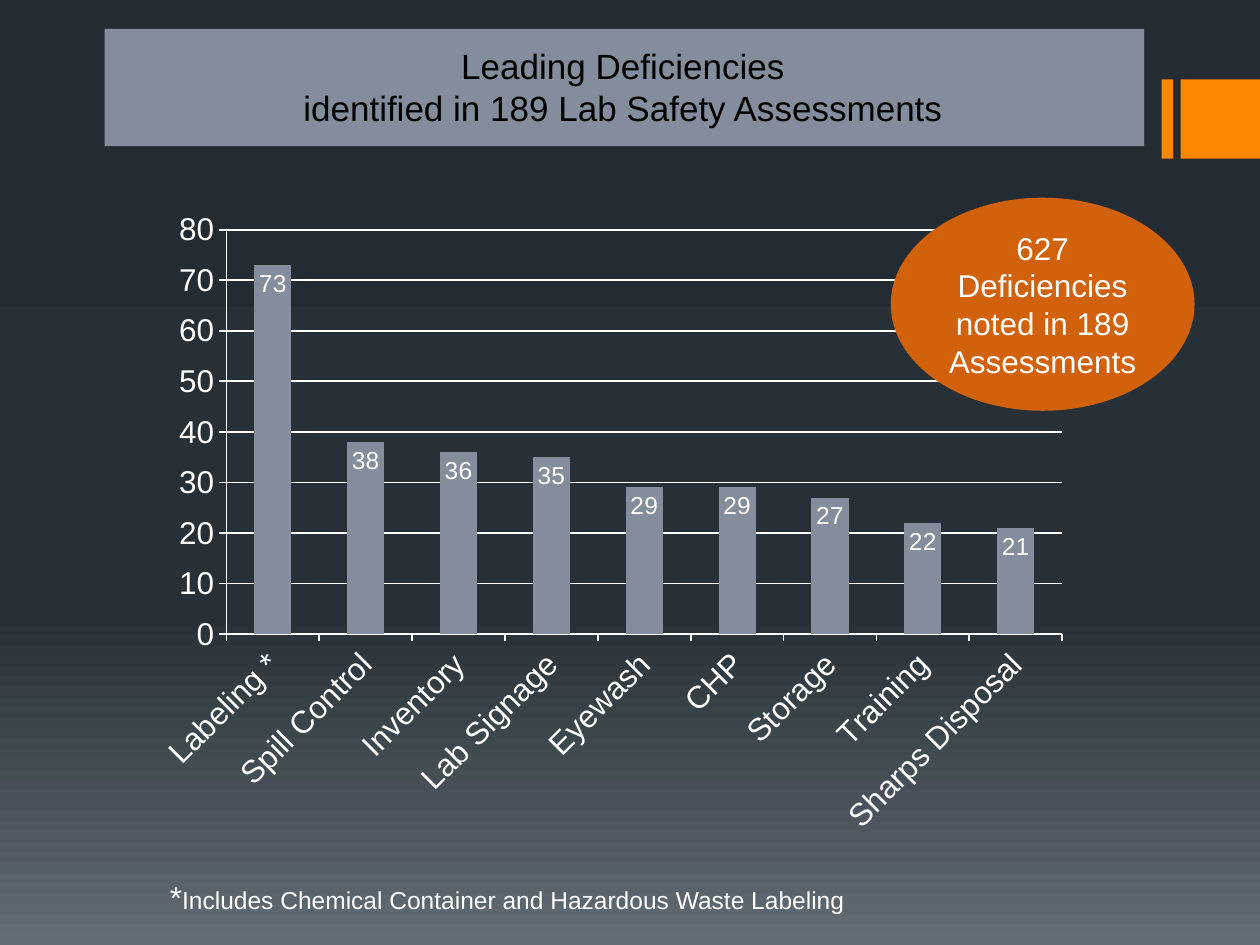
from copy import deepcopy

from pptx import Presentation
from pptx.chart.data import CategoryChartData
from pptx.dml.color import RGBColor
from pptx.enum.chart import XL_CHART_TYPE, XL_LABEL_POSITION, XL_TICK_MARK
from pptx.enum.shapes import MSO_SHAPE
from pptx.enum.text import MSO_ANCHOR, MSO_AUTO_SIZE, PP_ALIGN
from pptx.util import Inches, Pt

FONT = "Arial"
WHITE, BLACK = "FFFFFF", "000000"
SLATE, ORANGE, RUST = "838D9B", "FF8600", "D2610C"
BACKGROUND = [(0, "242C33"), (0.65, "273037"), (1, "636D76")]
BAND = (0.83, 0.23, 8.25, 0.93)
DEFICIENCIES = {
    " Labeling *": 73, "Spill Control": 38, "Inventory": 36,
    "Lab Signage": 35, "Eyewash": 29, "CHP": 29,
    "Storage": 27, "Training": 22, "Sharps Disposal": 21,
}


def color(hex_code):
    return RGBColor.from_string(hex_code)


def inches(at):
    return [Inches(length) for length in at]


def style_font(font, size, hex_code=WHITE):
    font.name = FONT
    font.size = Pt(size)
    font.color.rgb = color(hex_code)


def write(para, text, size, hex_code=WHITE, align=None):
    """Add text to a paragraph, with a line break at each newline."""
    if align is not None:
        para.alignment = align
    for index, line in enumerate(text.split("\n")):
        if index:
            para.add_line_break()
        span = para.add_run()
        span.text = line
        style_font(span.font, size, hex_code)


def paint_background(page):
    fill = page.background.fill
    fill.gradient()
    fill.gradient_angle = 270
    last = fill.gradient_stops[1]._gs
    last.addprevious(deepcopy(last))
    for stop, (position, hex_code) in zip(fill.gradient_stops, BACKGROUND):
        stop.position = position
        stop.color.rgb = color(hex_code)


def add_block(page, at, fill, kind=MSO_SHAPE.RECTANGLE, line=None):
    block = page.shapes.add_shape(kind, *inches(at))
    block.shadow.inherit = False
    block.fill.solid()
    block.fill.fore_color.rgb = color(fill)
    if line:
        block.line.color.rgb = color(line)
        block.line.width = Pt(1.5)
    else:
        block.line.fill.background()
    return block


def place_title(page, band):
    title = page.shapes.title
    band.element.addnext(title.element)
    title.left, title.top, title.width, title.height = inches((0.49, 0.23, 9, 1.1))
    frame = title.text_frame
    frame.word_wrap = True
    frame.auto_size = MSO_AUTO_SIZE.NONE
    frame.vertical_anchor = MSO_ANCHOR.BOTTOM
    frame.margin_bottom = Inches(0.31)
    frame.margin_right = Inches(0.19)
    write(frame.paragraphs[0],
          "Leading Deficiencies\nidentified in 189 Lab Safety Assessments",
          20, BLACK, PP_ALIGN.CENTER)


def style_line(line):
    line.color.rgb = color(WHITE)
    line.width = Pt(1)


def add_deficiency_chart(page):
    data = CategoryChartData()
    data.categories = list(DEFICIENCIES)
    data.add_series("Series 1", list(DEFICIENCIES.values()))
    chart = page.shapes.add_chart(XL_CHART_TYPE.COLUMN_STACKED,
                                  *inches((1.08, 1.58, 7.5, 5.14)), data).chart
    chart.has_legend = False
    chart.has_title = False
    style_font(chart.font, 18)

    for axis in (chart.category_axis, chart.value_axis):
        axis.major_tick_mark = XL_TICK_MARK.OUTSIDE
        axis.minor_tick_mark = XL_TICK_MARK.NONE
        style_font(axis.tick_labels.font, 18)
        style_line(axis.format.line)
    chart.category_axis._element.txPr.bodyPr.set("rot", "-2700000")
    values = chart.value_axis
    values.minimum_scale, values.maximum_scale, values.major_unit = 0, 80, 10
    values.has_major_gridlines = True
    style_line(values.major_gridlines.format.line)

    plot = chart.plots[0]
    plot.gap_width, plot.overlap = 150, 100
    plot.vary_by_categories = False
    bars = plot.series[0].format.fill
    bars.solid()
    bars.fore_color.rgb = color(SLATE)
    plot.has_data_labels = True
    labels = plot.data_labels
    labels.show_value = True
    labels.position = XL_LABEL_POSITION.INSIDE_END
    style_font(labels.font, 14)


def add_callout(page):
    callout = add_block(page, (7.08, 1.58, 2.39, 1.67), RUST, MSO_SHAPE.OVAL, RUST)
    frame = callout.text_frame
    frame.word_wrap = True
    frame.vertical_anchor = MSO_ANCHOR.MIDDLE
    write(frame.paragraphs[0], "627 Deficiencies noted in 189 Assessments",
          18, align=PP_ALIGN.CENTER)


def add_footnote(page):
    frame = page.shapes.add_textbox(*inches((1.25, 6.92, 5.83, 0.4))).text_frame
    frame.word_wrap = True
    frame.auto_size = MSO_AUTO_SIZE.SHAPE_TO_FIT_TEXT
    para = frame.paragraphs[0]
    write(para, "*", 18)
    write(para, "Includes Chemical Container and Hazardous Waste Labeling", 14)


def main():
    deck = Presentation()
    deck.slide_width, deck.slide_height = Inches(10), Inches(7.5)
    page = deck.slides.add_slide(deck.slide_layouts[5])
    paint_background(page)
    for left, width in ((9.22, 0.09), (9.37, 0.63)):
        add_block(page, (left, 0.63, width, 0.63), ORANGE)
    place_title(page, add_block(page, BAND, SLATE))
    add_deficiency_chart(page)
    add_callout(page)
    add_footnote(page)
    deck.save("out.pptx")


if __name__ == "__main__":
    main()
